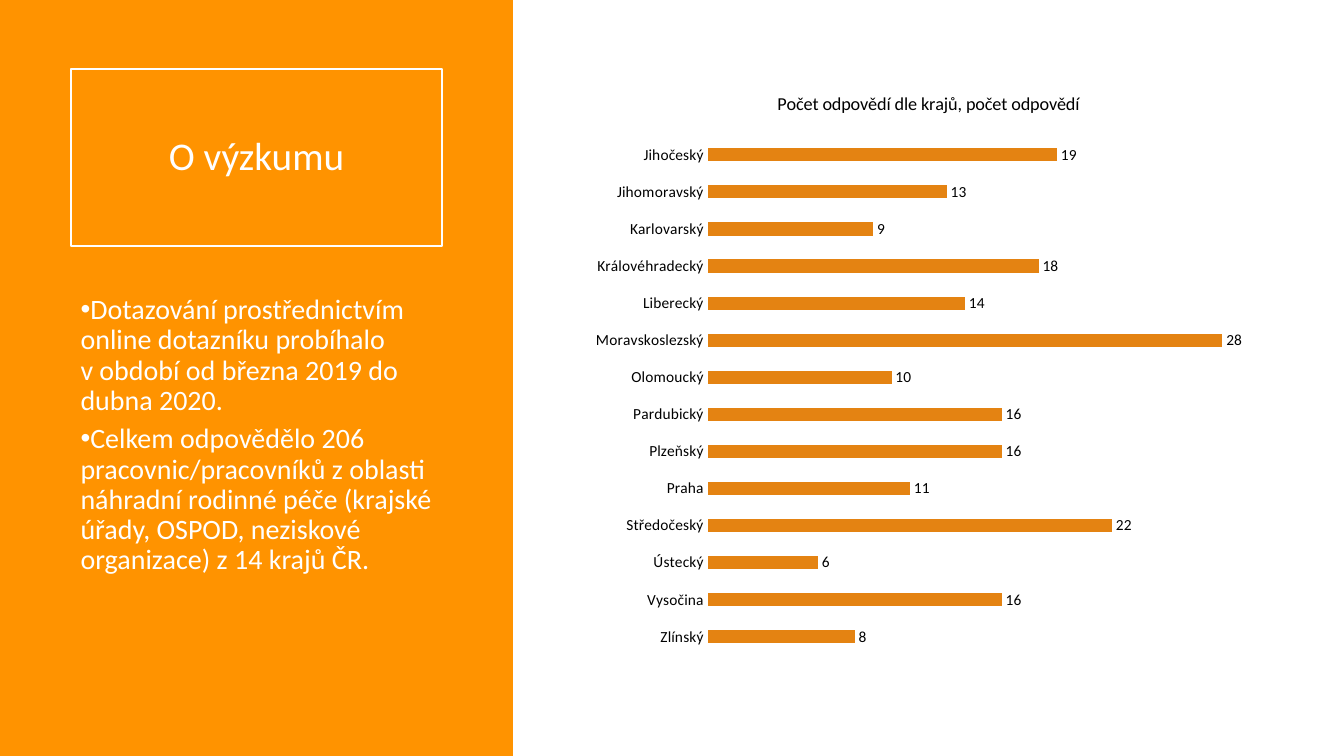
import pptx
import pptx.chart.data
import pptx.dml.color
import pptx.enum.chart
import pptx.enum.shapes
import pptx.enum.text
import pptx.oxml.ns
import pptx.oxml.xmlchemy
import pptx.util
from pptx.util import Cm

FONT = "Calibri"
WHITE, BLACK = "FFFFFF", "000000"
PANEL_ORANGE, BAR_ORANGE = "FF9300", "E48312"
SLIDE_WIDTH, SLIDE_HEIGHT = Cm(33.87), Cm(19.05)
PANEL_WIDTH = Cm(12.93)

TITLE = "O výzkumu"
FACTS = [
    "Dotazování prostřednictvím online dotazníku probíhalo\vv období od března 2019 do dubna 2020.",
    "Celkem odpovědělo 206 pracovnic/pracovníků z oblasti náhradní rodinné péče "
    "(krajské úřady, OSPOD, neziskové organizace) z 14 krajů ČR.",
]
CHART_TITLE = "Počet odpovědí dle krajů, počet odpovědí"
ANSWERS = {
    "Zlínský": 8, "Vysočina": 16, "Ústecký": 6, "Středočeský": 22, "Praha": 11,
    "Plzeňský": 16, "Pardubický": 16, "Olomoucký": 10, "Moravskoslezský": 28,
    "Liberecký": 14, "Královéhradecký": 18, "Karlovarský": 9,
    "Jihomoravský": 13, "Jihočeský": 19,
}


def color(value):
    return pptx.dml.color.RGBColor.from_string(value)


def set_font(font, size, value):
    font.name = FONT
    font.size = pptx.util.Pt(size)
    font.bold = False
    font.color.rgb = color(value)


def append_element(parent, tag, **attributes):
    element = pptx.oxml.xmlchemy.OxmlElement(tag)
    for name, value in attributes.items():
        element.set(name, str(value))
    parent.append(element)
    return element


def add_bullet(para):
    properties = para._p.get_or_add_pPr()
    properties.set("marL", "0")
    properties.set("indent", str(-Cm(0.64)))
    append_element(properties, "a:buFont", typeface="Arial")
    append_element(properties, "a:buChar", char="•")


def add_panel(slide, left, top, width, height):
    """Orange panel with the framed title and the facts under it."""
    panel = slide.shapes.add_shape(
        pptx.enum.shapes.MSO_SHAPE.RECTANGLE, left, top, width, height)
    panel.shadow.inherit = False
    panel.fill.solid()
    panel.fill.fore_color.rgb = color(PANEL_ORANGE)
    panel.line.fill.background()
    # The panel goes behind the title placeholder.
    slide.shapes._spTree.insert(2, panel._element)

    margin = Cm(1.78)
    inner_width = width - 2 * margin
    title = slide.shapes.title
    title.left, title.top = left + margin, top + Cm(1.73)
    title.width, title.height = inner_width, Cm(4.47)
    title.line.color.rgb = color(WHITE)
    title.line.width = pptx.util.Pt(1.5)
    title.text_frame.text = TITLE
    title.text_frame.vertical_anchor = pptx.enum.text.MSO_ANCHOR.MIDDLE
    para = title.text_frame.paragraphs[0]
    para.alignment = pptx.enum.text.PP_ALIGN.CENTER
    para.line_spacing = 0.9
    set_font(para.font, 28, WHITE)

    box = slide.shapes.add_textbox(left + margin, top + Cm(7.32), inner_width, Cm(9.5))
    frame = box.text_frame
    frame.word_wrap = True
    for index, fact in enumerate(FACTS):
        para = frame.add_paragraph() if index else frame.paragraphs[0]
        para.text = fact
        para.line_spacing = 0.9
        para.space_after = pptx.util.Pt(6)
        set_font(para.font, 20, WHITE)
        # Bullet elements must precede the default run properties.
        properties = para._p.get_or_add_pPr()
        run_defaults = properties.find(pptx.oxml.ns.qn("a:defRPr"))
        add_bullet(para)
        properties.append(run_defaults)


def set_plot_area(chart, **fractions):
    """Fix the inner plot area as fractions of the chart."""
    plot_area = chart._chartSpace.chart.plotArea
    for layout in plot_area.findall(pptx.oxml.ns.qn("c:layout")):
        plot_area.remove(layout)
    layout = pptx.oxml.xmlchemy.OxmlElement("c:layout")
    manual = append_element(layout, "c:manualLayout")
    settings = {"layoutTarget": "inner", "xMode": "edge", "yMode": "edge", **fractions}
    for name, value in settings.items():
        append_element(manual, "c:" + name, val=value)
    plot_area.insert(0, layout)


def add_answers_chart(slide, left, top, width, height):
    data = pptx.chart.data.CategoryChartData(number_format="###0")
    data.categories = list(ANSWERS)
    data.add_series("Počet odpovědí", list(ANSWERS.values()))
    chart = slide.shapes.add_chart(
        pptx.enum.chart.XL_CHART_TYPE.BAR_CLUSTERED, left, top, width, height, data).chart
    set_font(chart.font, 11, BLACK)
    chart.has_legend = False
    chart.has_title = True
    chart.chart_title.include_in_layout = False
    chart.chart_title.text_frame.text = CHART_TITLE
    set_font(chart.chart_title.text_frame.paragraphs[0].font, 13, BLACK)

    regions = chart.category_axis
    regions.major_tick_mark = pptx.enum.chart.XL_TICK_MARK.NONE
    regions.format.line.color.rgb = color(WHITE)
    regions.format.line.width = pptx.util.Pt(0.75)
    set_font(regions.tick_labels.font, 11, BLACK)
    counts = chart.value_axis
    counts.minimum_scale, counts.maximum_scale = 0, 30
    counts.has_major_gridlines = False
    counts.visible = False

    plot = chart.plots[0]
    plot.gap_width = 182
    plot.vary_by_categories = False
    bars = plot.series[0].format.fill
    bars.solid()
    bars.fore_color.rgb = color(BAR_ORANGE)
    plot.has_data_labels = True
    labels = plot.data_labels
    labels.show_value = True
    labels.number_format = "###0"
    labels.number_format_is_linked = False
    labels.position = pptx.enum.chart.XL_LABEL_POSITION.OUTSIDE_END
    set_font(labels.font, 11, BLACK)
    set_plot_area(chart, x=0.18, y=0.11, w=0.8, h=0.87)


def main():
    deck = pptx.Presentation()
    deck.slide_width, deck.slide_height = SLIDE_WIDTH, SLIDE_HEIGHT
    slide = deck.slides.add_slide(deck.slide_layouts.get_by_name("Title Only"))
    add_panel(slide, 0, 0, PANEL_WIDTH, SLIDE_HEIGHT)
    add_answers_chart(slide, Cm(14.71), Cm(1.78), Cm(17.37), Cm(15.04))
    deck.save("out.pptx")


if __name__ == "__main__":
    main()
